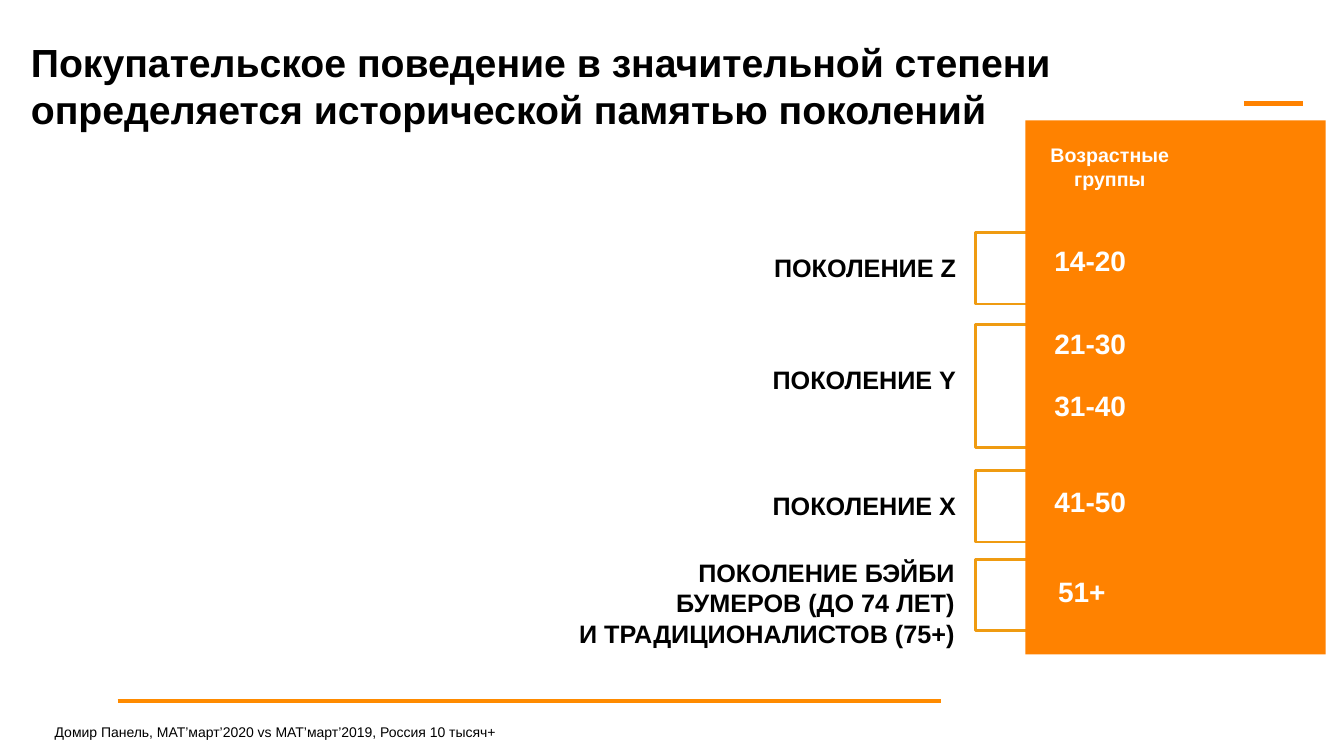
import pptx
import pptx.util
import pptx.dml.color
import pptx.enum.shapes
import pptx.enum.text
from lxml import etree

Pt = pptx.util.Pt
Shapes = pptx.enum.shapes.MSO_SHAPE
Align = pptx.enum.text.PP_ALIGN
Anchor = pptx.enum.text.MSO_ANCHOR

# Content
TITLE = "Покупательское поведение в значительной степени определяется исторической памятью поколений"
SOURCE = "Домир Панель, MAT’март’2020 vs MAT’март’2019, Россия 10 тысяч+"
AGE_HEADING = "Возрастные группы"
# label lines, label left, top, width, height; bracket top, height
GENERATIONS = [
    (["ПОКОЛЕНИЕ Z"], (497, 176.4, 193, 29), (166.2, 51)),
    (["ПОКОЛЕНИЕ Y"], (497, 257, 193, 29), (231.8, 88)),
    (["ПОКОЛЕНИЕ X"], (497, 347, 193, 29), (336.2, 51)),
    (["ПОКОЛЕНИЕ БЭЙБИ БУМЕРОВ (ДО 74 ЛЕТ)", "И ТРАДИЦИОНАЛИСТОВ (75+)"],
     (398, 394.6, 291, 73), (399.6, 51)),
]
# text, left, top
AGES = [
    ("14-20", 732, 169.2),
    ("21-30", 732, 228.2),
    ("31-40", 732, 272.2),
    ("41-50", 732, 341.3),
    ("51+", 726, 405.4),
]
# left, right, y, colour
RULES = [(888.5, 931, 74, "FF8200"), (84, 672.5, 501, "FF8B00")]

BLACK, WHITE, ORANGE, AMBER = "000000", "FFFFFF", "FF8200", "EF9B11"


def colour(value):
    return pptx.dml.color.RGBColor.from_string(value)


presentation = pptx.Presentation()
presentation.slide_width, presentation.slide_height = Pt(960), Pt(540)
slide = presentation.slides.add_slide(presentation.slide_layouts[6])


def add_box(kind, box, fill=None, line=None):
    shape = slide.shapes.add_shape(kind, *map(Pt, box))
    shape.shadow.inherit = False
    if fill:
        shape.fill.solid()
        shape.fill.fore_color.rgb = colour(fill)
    else:
        shape.fill.background()
    if line:
        shape.line.color.rgb = colour(line)
        shape.line.width = Pt(2)
    else:
        shape.line.fill.background()
    return shape


def write(shape, lines, size, ink=BLACK, bold=True, align=Align.LEFT, wrap=True):
    frame = shape.text_frame
    frame.word_wrap = wrap
    frame.text = "\n".join(lines)
    for paragraph in frame.paragraphs:
        paragraph.alignment = align
        paragraph.font.name = "Arial"
        paragraph.font.size = Pt(size)
        paragraph.font.bold = bold
        paragraph.font.color.rgb = colour(ink)


def add_text(box, lines, size, **style):
    write(slide.shapes.add_textbox(*map(Pt, box)), lines, size, **style)


def add_oval_text(box, text, size, wrap):
    shape = add_box(Shapes.OVAL, box)
    shape.text_frame.vertical_anchor = Anchor.MIDDLE
    write(shape, [text], size, ink=WHITE, align=Align.CENTER, wrap=wrap)


# Orange rules
for left, right, y, ink in RULES:
    rule = slide.shapes.add_connector(
        pptx.enum.shapes.MSO_CONNECTOR.STRAIGHT, Pt(left), Pt(y), Pt(right), Pt(y))
    rule.line.color.rgb = colour(ink)
    rule.line.width = Pt(3)
    etree.SubElement(rule._element.spPr, pptx.oxml.ns.qn("a:effectLst"))

# Title
add_text((15, 24, 924, 75), [TITLE], 28)

# Brackets, partly covered by the age panel
for _, _, (top, height) in GENERATIONS:
    add_box(Shapes.RECTANGLE, (696.5, top, 178.5, height), line=AMBER)
add_box(Shapes.RECTANGLE, (732.5, 86, 214.5, 381.5), fill=ORANGE)

# Age groups
add_oval_text((720, 106, 145.5, 26), AGE_HEADING, 14, True)
for text, left, top in AGES:
    add_oval_text((left, top, 93.6, 34), text, 20, False)

# Generation labels
for lines, box, _ in GENERATIONS:
    add_text(box, lines, 18, align=Align.RIGHT)

# Source
add_text((32, 513.4, 376, 19.4), [SOURCE], 10, bold=False)

presentation.save("out.pptx")
